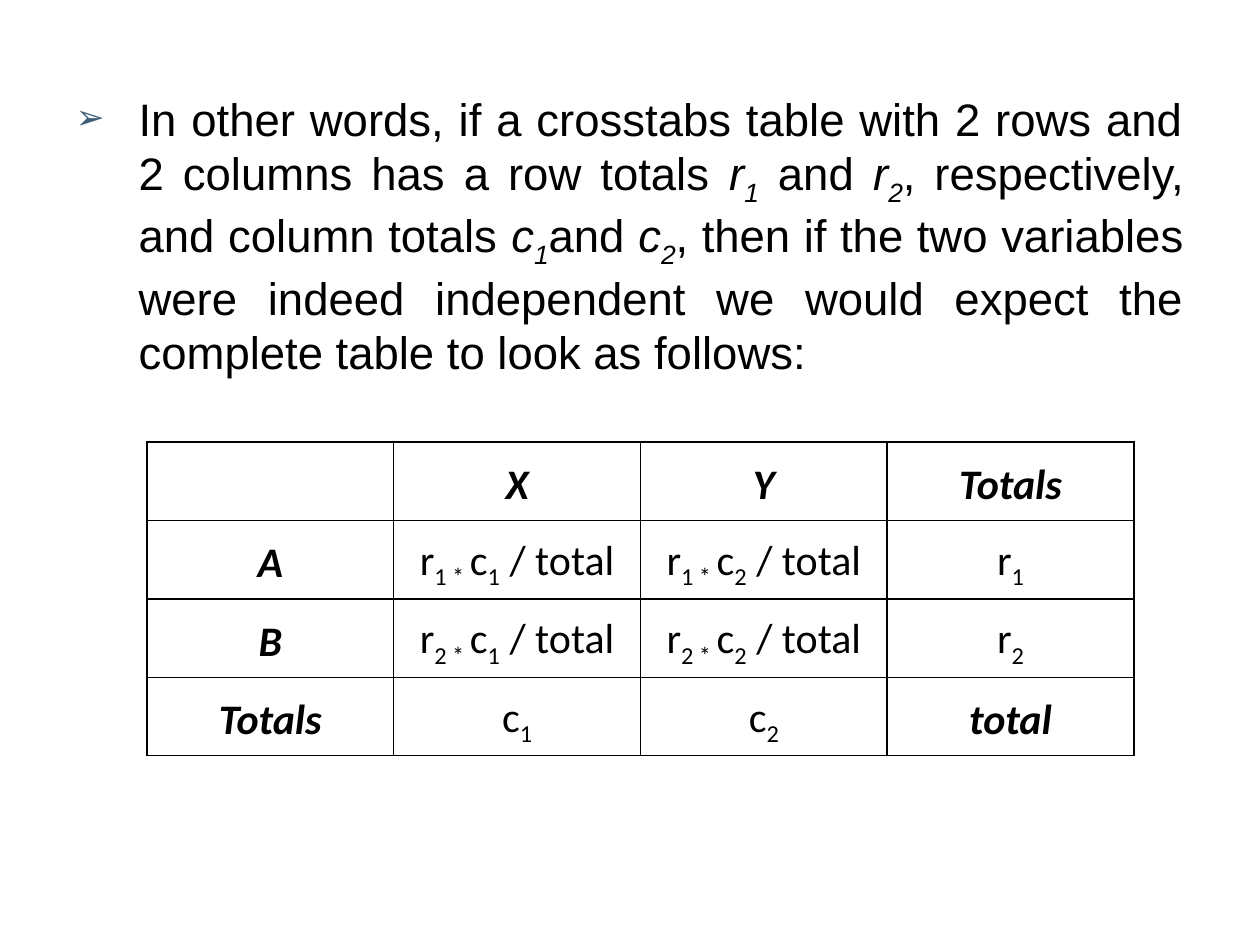
from lxml import etree
from pptx import Presentation
from pptx.dml.color import RGBColor
from pptx.enum import text
from pptx.oxml import ns
from pptx.util import Pt

BLACK = RGBColor(0, 0, 0)
BULLET = RGBColor(0x3E, 0x5D, 0x78)

# In every string, "_" switches subscript on and off.
INTRO = [
    ("In other words, if a crosstabs table with 2 rows and 2 columns has a row totals ", False),
    ("r_1", True), (" and ", False), ("r_2", True),
    (", respectively, and column totals ", False),
    ("c_1", True), ("and ", False), ("c_2", True),
    (", then if the two variables were indeed independent we would expect "
     "the complete table to look as follows:", False),
]
ROWS = [
    ["", "X", "Y", "Totals"],
    ["A", "r_1 * _c_1_ / total", "r_1 * _c_2_ / total", "r_1"],
    ["B", "r_2 * _c_1_ / total", "r_2 * _c_2_ / total", "r_2"],
    ["Totals", "c_1", "c_2", "total"],
]
BODY_BOX = (Pt(36), Pt(48.24), Pt(648), Pt(455))
TABLE_LEFT, TABLE_TOP = Pt(84), Pt(252.7)
COL_W, ROW_H = Pt(141), Pt(44.8)


def add(parent, tag, **attrs):
    return etree.SubElement(parent, ns.qn(tag), **attrs)


def add_runs(p, words, font, size, bold=False, italic=False):
    for i, part in enumerate(words.split("_")):
        if not part:
            continue
        r = p.add_run()
        r.text = part
        r.font.name, r.font.size = font, Pt(size)
        r.font.bold, r.font.italic = bold, italic
        r.font.color.rgb = BLACK
        if i % 2:
            r._r.get_or_add_rPr().set("baseline", "-25000")


def add_bullet(p):
    pPr = p._p.get_or_add_pPr()
    pPr.set("marL", str(Pt(36)))
    pPr.set("indent", str(-Pt(36)))
    add(add(pPr, "a:buClr"), "a:srgbClr", val=str(BULLET))
    add(pPr, "a:buSzPct", val="76000")
    add(pPr, "a:buFont", typeface="Arial")
    add(pPr, "a:buChar", char="➢")


def add_borders(cell):
    tcPr = cell._tc.get_or_add_tcPr()
    for side in ("a:lnL", "a:lnR", "a:lnT", "a:lnB"):
        ln = add(tcPr, side, w=str(Pt(1)))
        add(add(ln, "a:solidFill"), "a:srgbClr", val=str(BLACK))


def fill_cell(cell, words, bold):
    add_borders(cell)
    cell.fill.background()
    cell.vertical_anchor = text.MSO_ANCHOR.MIDDLE
    cell.margin_left = cell.margin_right = Pt(1.44)
    cell.margin_top = cell.margin_bottom = Pt(1.44)
    p = cell.text_frame.paragraphs[0]
    p.alignment = text.PP_ALIGN.CENTER
    p.line_spacing, p.space_after = 1.15, Pt(10)
    add_runs(p, words, "Calibri", 24, bold, bold)


prs = Presentation()
prs.slide_width, prs.slide_height = Pt(720), Pt(540)
s = prs.slides.add_slide(prs.slide_layouts[1])
title = s.shapes.title._element
title.getparent().remove(title)

body = s.placeholders[1]
body.left, body.top, body.width, body.height = BODY_BOX
tf = body.text_frame
tf.word_wrap = True
tf.auto_size = text.MSO_AUTO_SIZE.NONE
tf.vertical_anchor = text.MSO_ANCHOR.TOP
p = tf.paragraphs[0]
p.alignment = text.PP_ALIGN.JUSTIFY
p.space_before = Pt(6)
add_bullet(p)
for words, italic in INTRO:
    add_runs(p, words, "Arial", 26, italic=italic)

n_rows, n_cols = len(ROWS), len(ROWS[0])
table = s.shapes.add_table(n_rows, n_cols, TABLE_LEFT, TABLE_TOP,
                           COL_W * n_cols, ROW_H * n_rows).table
table.first_row = table.horz_banding = False
for col in table.columns:
    col.width = COL_W
for i, row in enumerate(ROWS):
    table.rows[i].height = ROW_H
    for j, words in enumerate(row):
        label = i == 0 or j == 0 or words == "total"
        fill_cell(table.cell(i, j), words, label)

prs.save("out.pptx")
